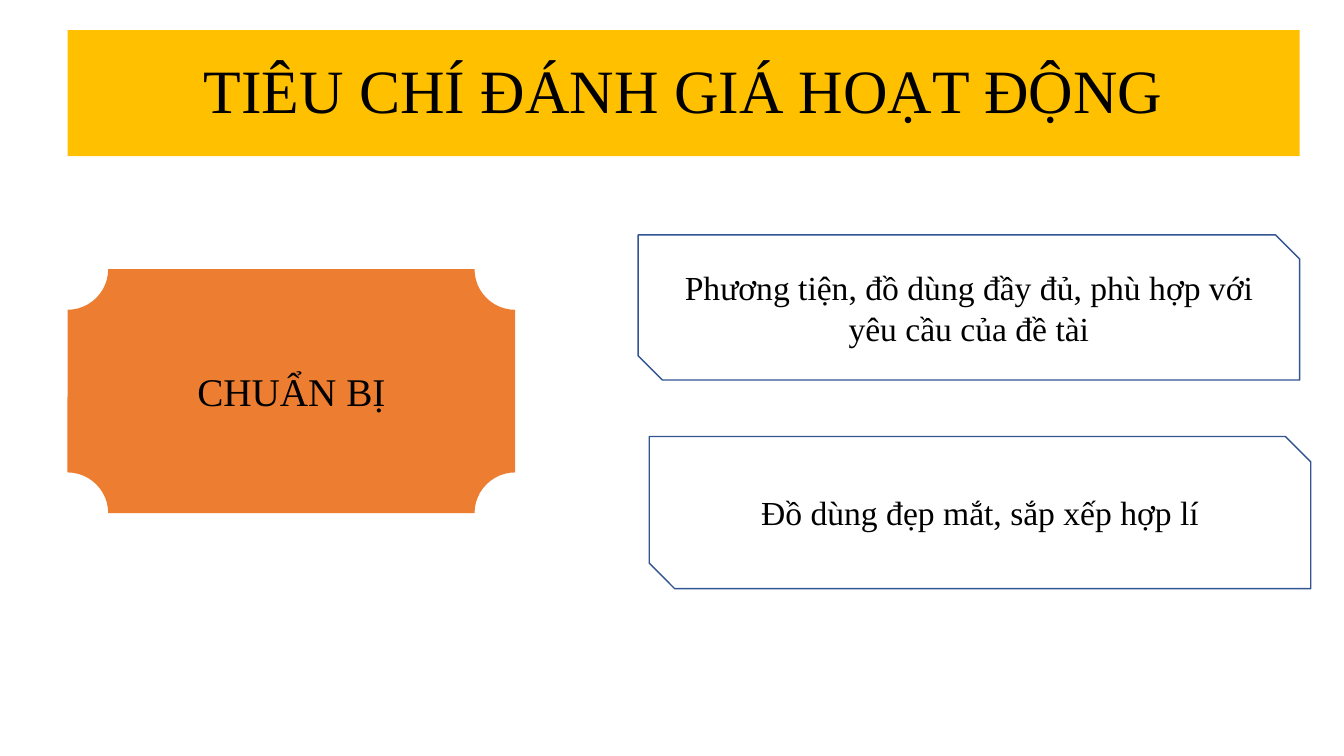
from dataclasses import dataclass

from pptx import Presentation
from pptx.dml.color import RGBColor
from pptx.enum import shapes, text
from pptx.util import Inches, Pt


@dataclass(frozen=True)
class Theme:
    font: str = "Times New Roman"
    ink: str = "000000"
    banner: str = "FFC000"
    topic: str = "ED7D31"
    outline: str = "325491"
    title_size: int = 44
    topic_size: int = 28
    criterion_size: int = 24


THEME = Theme()
SHAPE = shapes.MSO_SHAPE


def add_box(page, kind, bounds, wording, size, fill=None, line=None, spacing=1.0):
    box = page.shapes.add_shape(kind, *map(Inches, bounds))
    box.shadow.inherit = False
    if fill:
        box.fill.solid()
        box.fill.fore_color.rgb = RGBColor.from_string(fill)
    else:
        box.fill.background()
    if line:
        box.line.color.rgb = RGBColor.from_string(line)
        box.line.width = Pt(1)
    else:
        box.line.fill.background()
    frame = box.text_frame
    frame.word_wrap = True
    frame.vertical_anchor = text.MSO_ANCHOR.MIDDLE
    para = frame.paragraphs[0]
    para.alignment = text.PP_ALIGN.CENTER
    para.line_spacing = spacing
    span = para.add_run()
    span.text = wording
    span.font.name = THEME.font
    span.font.size = Pt(size)
    span.font.color.rgb = RGBColor.from_string(THEME.ink)


def add_criterion(page, bounds, wording):
    add_box(page, SHAPE.SNIP_2_DIAG_RECTANGLE, bounds, wording,
            THEME.criterion_size, line=THEME.outline)


def main():
    deck = Presentation()
    deck.slide_width = Inches(13.33)
    deck.slide_height = Inches(7.5)
    page = deck.slides.add_slide(deck.slide_layouts[6])

    add_box(page, SHAPE.RECTANGLE, (0.67, 0.3, 12.22, 1.25),
            "TIÊU CHÍ ĐÁNH GIÁ HOẠT ĐỘNG", THEME.title_size,
            fill=THEME.banner, spacing=0.9)
    add_box(page, SHAPE.PLAQUE, (0.67, 2.67, 4.44, 2.42),
            "CHUẨN BỊ", THEME.topic_size, fill=THEME.topic)
    add_criterion(page, (6.33, 2.33, 6.56, 1.44),
                  "Phương tiện, đồ dùng đầy đủ, phù hợp với yêu cầu của đề tài")
    add_criterion(page, (6.44, 4.33, 6.56, 1.51),
                  "Đồ dùng đẹp mắt, sắp xếp hợp lí")

    deck.save("out.pptx")


if __name__ == "__main__":
    main()
